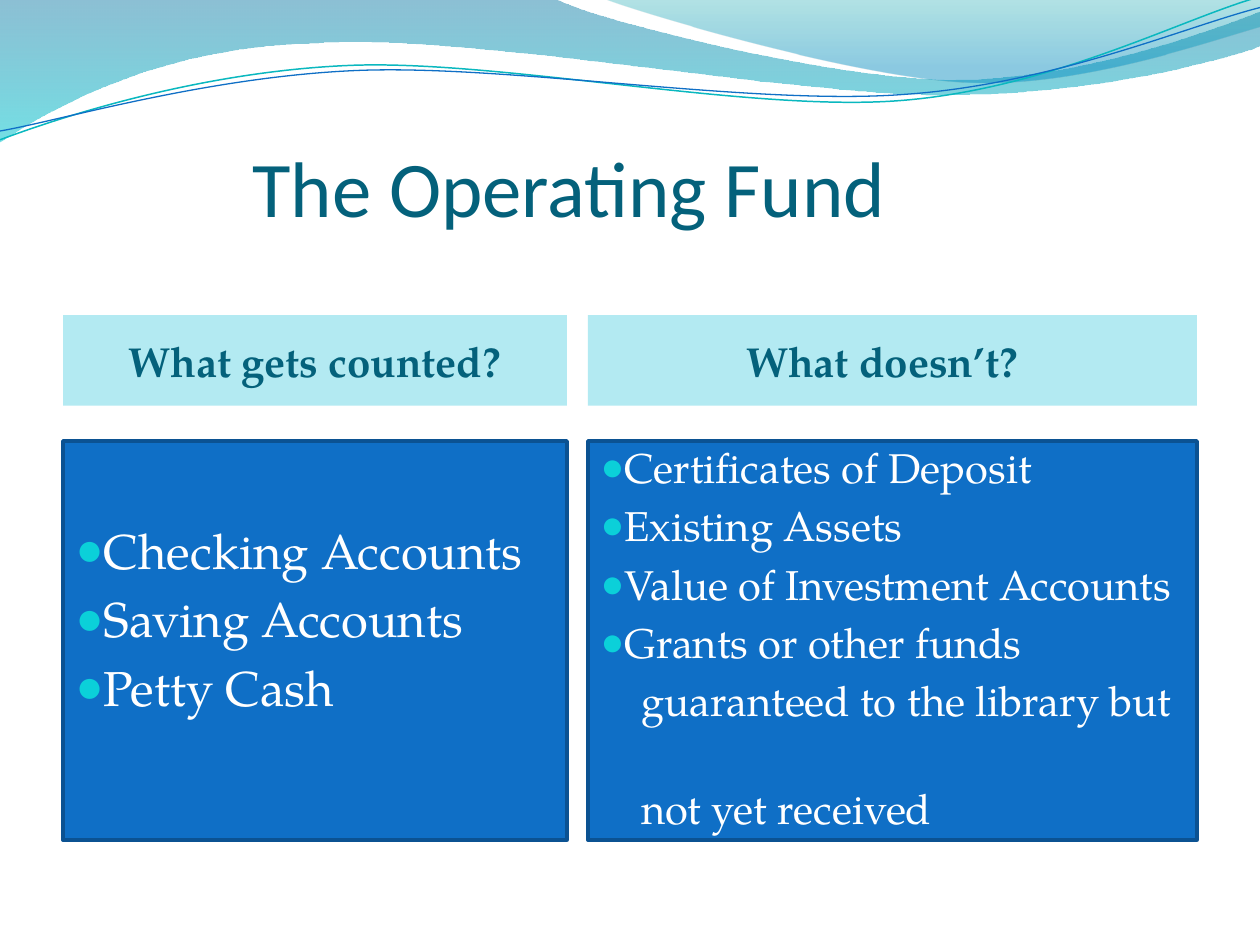
import pptx
import pptx.util
import pptx.dml.color
import pptx.enum.text
import pptx.oxml
import pptx.oxml.ns
from lxml import etree

Pt = pptx.util.Pt
qn = pptx.oxml.ns.qn
ALIGN = pptx.enum.text.PP_ALIGN
ANCHOR = pptx.enum.text.MSO_ANCHOR
SERIF = "TeX Gyre Pagella"
TEAL, BLUE, WHITE = "04617B", "0F6FC6", "FFFFFF"
INCH = 72

# Outlines in inches: a start point, then segments. A segment of one point is
# a straight line; one of three points is a cubic curve (two handles, an end).
BACK_WAVE = [[(0, 0)],
             [(4.4, -0.01)],
             [(4.76, 0.17), (6.64, 0.63), (7.58, 0.63)],
             [(8.53, 0.63), (9.58, 0.26), (10, 0.09)],
             [(10.01, 0.36)],
             [(9.83, 0.44), (8.7, 0.76), (7.46, 0.75)],
             [(6.22, 0.75), (3.82, 0.28), (2.57, 0.34)],
             [(1.29, 0.36), (0.46, 0.83), (-0.01, 1.13)]]
FRONT_WAVE = [[(4.79, -0.01)],
              [(5.09, 0.11), (6.82, 0.62), (7.69, 0.65)],
              [(8.56, 0.69), (9.61, 0.32), (10, 0.21)],
              [(10, 0)]]
TEAL_LINE = [[(0, 1.11)],
             [(0.48, 0.93), (1.58, 0.57), (2.77, 0.52)],
             [(3.95, 0.47), (5.93, 0.89), (7.13, 0.8)],
             [(8.33, 0.71), (9.38, 0.15), (9.98, -0.02)]]
BLUE_LINE = [[(0, 1.04)],
             [(0.47, 0.96), (1.64, 0.61), (2.83, 0.56)],
             [(4.03, 0.51), (5.97, 0.84), (7.17, 0.75)],
             [(8.36, 0.67), (9.41, 0.21), (10, 0.06)]]


def rgb(color):
    return pptx.dml.color.RGBColor.from_string(color)


def add_outline(s, outline, close):
    """Draw the outline through its end points, then bend the curved segments."""
    start, *segments = [[(Pt(x * INCH), Pt(y * INCH)) for x, y in segment]
                        for segment in outline]
    builder = s.shapes.build_freeform(*start[0])
    builder.add_line_segments([segment[-1] for segment in segments], close=close)
    sp = builder.convert_to_shape()
    sp.shadow.inherit = False
    lines = list(sp.element.spPr.iter(qn("a:lnTo")))
    for line, segment in zip(lines, segments):
        if len(segment) == 3:
            curve = etree.Element(qn("a:cubicBezTo"))
            for x, y in segment:
                etree.SubElement(curve, qn("a:pt"), x=str(x - sp.left), y=str(y - sp.top))
            line.getparent().replace(line, curve)
    return sp


def add_wave(s, outline, stops):
    sp = add_outline(s, outline, True)
    sp.line.fill.background()
    sp.fill.gradient()
    sp.fill.gradient_angle = 270
    for stop, (position, color, opacity) in zip(sp.fill.gradient_stops, stops):
        stop.position = position
        stop.color.rgb = rgb(color)
    colors = sp.element.spPr.iter(qn("a:srgbClr"))
    for node, (position, color, opacity) in zip(colors, stops):
        etree.SubElement(node, qn("a:alpha"), val=str(opacity * 1000))


def add_wave_line(s, outline, color, width):
    sp = add_outline(s, outline, False)
    sp.fill.background()
    sp.line.color.rgb = rgb(color)
    sp.line.width = Pt(width)


def add_header_waves(s):
    add_wave(s, BACK_WAVE, [(0, "0074A1", 45), (1, "00C6CF", 55)])
    add_wave(s, FRONT_WAVE, [(0, "00A1A9", 30), (0.8, "008BBF", 45)])
    add_wave_line(s, TEAL_LINE, "0AB8BF", 0.85)
    add_wave_line(s, BLUE_LINE, BLUE, 0.75)


def place(sp, box, insets, anchor):
    """Bring a placeholder to the front and set its box and text frame."""
    sp.element.getparent().append(sp.element)
    for name, value in zip(("left", "top", "width", "height"), box):
        setattr(sp, name, Pt(value))
    tf = sp.text_frame
    for side, value in zip(("left", "top", "right", "bottom"), insets):
        setattr(tf, "margin_" + side, Pt(value))
    tf.auto_size = pptx.enum.text.MSO_AUTO_SIZE.NONE
    tf.word_wrap = True
    tf.vertical_anchor = anchor
    return tf


def write(p, text, align, size, color, font=SERIF, bold=False, before=0):
    p.alignment = align
    p.space_before = Pt(before)
    r = p.add_run()
    r.text = text
    for name, value in {"size": Pt(size), "name": font, "bold": bold}.items():
        setattr(r.font, name, value)
    r.font.color.rgb = rgb(color)


def set_bullet(p, bulleted):
    pPr = p._p.get_or_add_pPr()
    if bulleted:
        margin, indent = 0, Pt(-21.6)
        tags = ('<a:buClr {}><a:srgbClr val="0BD0D9"/></a:buClr>',
                '<a:buSzPct {} val="95000"/>', '<a:buChar {} char="●"/>')
    else:
        margin, indent = Pt(23.5), 0
        tags = ("<a:buNone {}/>",)
    pPr.set("marL", str(margin))
    pPr.set("indent", str(indent))
    for tag in tags:
        pPr.append(pptx.oxml.parse_xml(tag.format(pptx.oxml.ns.nsdecls("a"))))


def fill_title(sp, box, text):
    tf = place(sp, box, (0, 3.6, 70, 0), ANCHOR.BOTTOM)
    write(tf.paragraphs[0], text, ALIGN.CENTER, 45, TEAL, "Calibri")


def fill_heading(sp, box, text, right_inset):
    tf = place(sp, box, (3.6, 0, right_inset, 0), ANCHOR.MIDDLE)
    sp.fill.solid()
    sp.fill.fore_color.rgb = rgb("B3EAF2")
    write(tf.paragraphs[0], text, ALIGN.CENTER, 24, TEAL, bold=True)


def fill_list(sp, box, items, size, bottom_inset):
    """Items are (text, bulleted, space before)."""
    tf = place(sp, box, (7.2, 0, 7.2, bottom_inset), ANCHOR.MIDDLE)
    sp.fill.solid()
    sp.fill.fore_color.rgb = rgb(BLUE)
    sp.line.color.rgb = rgb("0B5292")
    sp.line.width = Pt(2)
    for i, (text, bulleted, before) in enumerate(items):
        p = tf.add_paragraph() if i else tf.paragraphs[0]
        write(p, text, ALIGN.LEFT, size, WHITE, before=before)
        set_bullet(p, bulleted)


def fill_column(heading, body, box, title, items, size, heading_inset, bottom_inset):
    left, top, width, height = box
    fill_list(body, (left, top + 72, width, height - 72), items, size, bottom_inset)
    fill_heading(heading, (left, top, width, 51.75), title, heading_inset)


def main():
    prs = pptx.Presentation()
    prs.slide_width, prs.slide_height = Pt(720), Pt(540)
    s = prs.slides.add_slide(prs.slide_layouts.get_by_name("Comparison"))
    title, left_heading, left_body, right_heading, right_body = s.placeholders
    add_header_waves(s)
    fill_title(title, (0, 78, 720, 55.5), "The Operating Fund")
    counted = [(text, True, 5.6) for text in
               ("Checking Accounts", "Saving Accounts", "Petty Cash")]
    excluded = [(text, True, 4.8) for text in
                ("Certificates of Deposit", "Existing Assets",
                 "Value of Investment Accounts", "Grants or other funds")]
    excluded += [("guaranteed to the library but", False, 4.8),
                 ("not yet received", False, 33)]
    fill_column(left_heading, left_body, (36, 180, 288, 300),
                "What gets counted?", counted, 28, 3.6, 25.5)
    fill_column(right_heading, right_body, (336, 180, 348, 300),
                "What doesn’t?", excluded, 23.8, 15.6, 3.6)
    prs.save("out.pptx")


if __name__ == "__main__":
    main()
